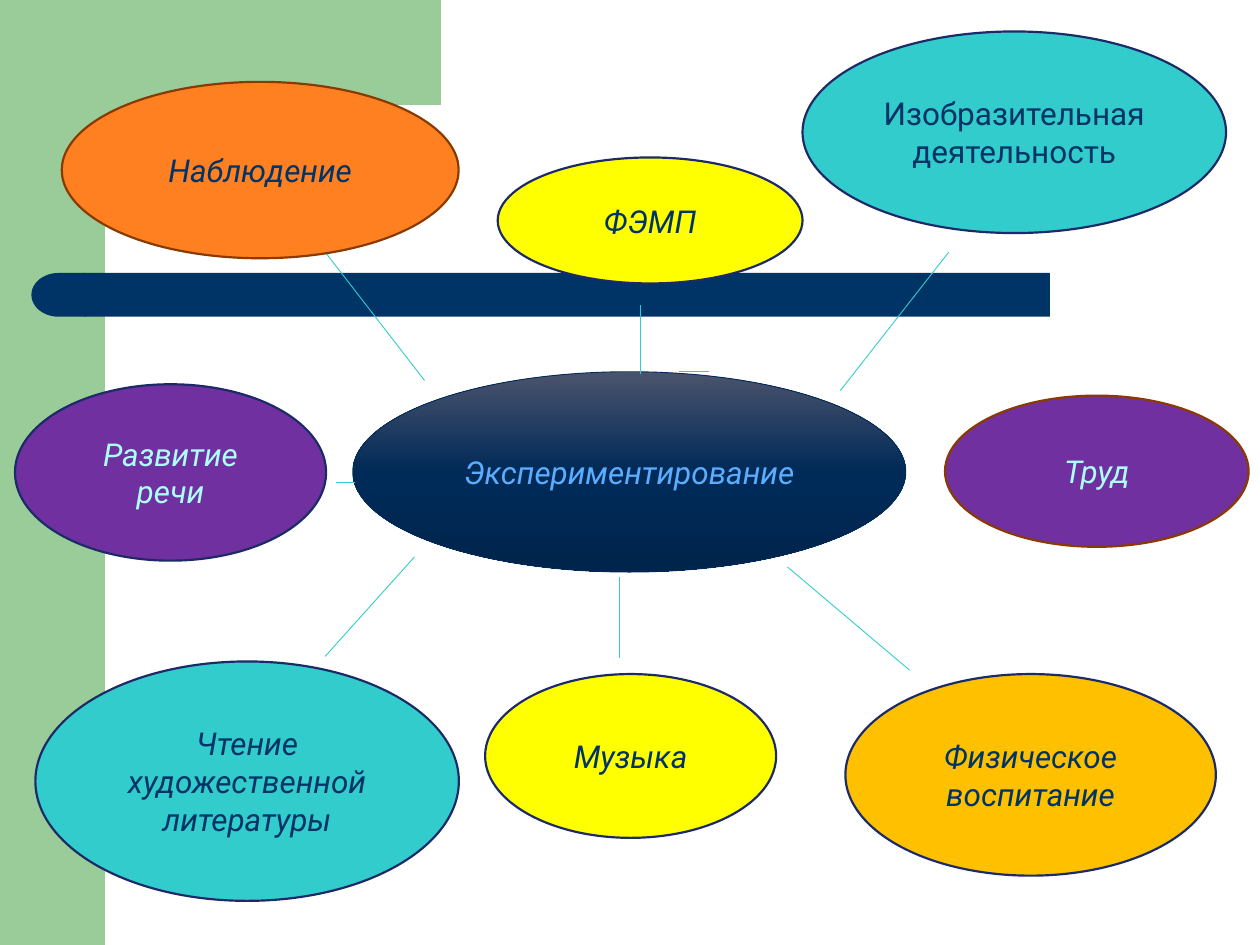
"""Build a slide of activities arranged around experimentation."""
from copy import deepcopy

from lxml.etree import SubElement
from pptx import Presentation
from pptx.dml.color import RGBColor
from pptx.enum.shapes import MSO_CONNECTOR, MSO_SHAPE as SHAPE
from pptx.enum.text import MSO_ANCHOR, PP_ALIGN
from pptx.oxml.ns import qn
from pptx.util import Pt

GREEN, NAVY, TEAL, YELLOW = "99CC99", "003366", "33CCCC", "FFFF00"
ORANGE, AMBER, PURPLE, ICE = "FF8021", "FFC000", "7030A0", "ADFFFF"
BLUE_EDGE, BROWN_EDGE = "1C2B68", "893A00"

CORNER = [(252, 0), (252, 60), (83.5, 60), (74, 61), (67, 66), (62, 75),
          (60, 84), (60, 92), (36, 92), (36, 0)]

CENTER = ["Экспериментирование"], (201.6, 212.4, 316, 114.5)
CENTER_STOPS = [(0, "4B536D"), (0.5, "002A57"), (1, "00254D")]

ACTIVITIES = [
    (["Наблюдение"], (35.3, 46.8, 226.8, 100.8), ORANGE, BROWN_EDGE, NAVY, True),
    (["ФЭМП"], (284.4, 90, 174.2, 72), YELLOW, BLUE_EDGE, NAVY, True),
    (["Изобразительная", "деятельность"], (458.6, 18, 242, 115.2), TEAL, BLUE_EDGE, NAVY, False),
    (["Развитие речи"], (8.6, 219.6, 177.8, 100.8), PURPLE, BLUE_EDGE, ICE, True),
    (["Труд"], (540, 226.1, 173.5, 86.4), PURPLE, BROWN_EDGE, ICE, True),
    (["Чтение", "художественной", "литературы"], (20.2, 378, 242, 136.8),
     TEAL, BLUE_EDGE, NAVY, True),
    (["Музыка"], (277.2, 385.2, 166.3, 93.6), YELLOW, BLUE_EDGE, NAVY, True),
    (["Физическое", "воспитание"], (483.1, 385.2, 211.7, 115.2), AMBER, BLUE_EDGE, NAVY, True),
]

SPOKES = [
    (242.6, 217.4, 185.8, 144), (480.2, 223.2, 542.2, 144),
    (388.1, 212.4, 405.4, 212.4), (192.2, 275.8, 203, 275.8),
    (365.8, 213.8, 365.8, 174.2), (236.9, 318.2, 185.8, 375.1),
    (354.2, 329.8, 354.2, 375.8), (450, 324, 519.8, 383),
]


def rgb(color):
    return RGBColor.from_string(color)


def paint(sp, fill, edge=None, width=1.25):
    sp.shadow.inherit = False
    if fill:
        sp.fill.solid()
        sp.fill.fore_color.rgb = rgb(fill)
    if edge:
        sp.line.color.rgb = rgb(edge)
        sp.line.width = Pt(width)
    else:
        sp.line.fill.background()


def add_shape(slide, kind, box):
    return slide.shapes.add_shape(kind, *map(Pt, box))


def write(sp, lines, color, italic, inset=(9.4, 5)):
    tf = sp.text_frame
    tf.word_wrap = True
    tf.vertical_anchor = MSO_ANCHOR.MIDDLE
    tf.margin_left = tf.margin_right = Pt(inset[0])
    tf.margin_top = tf.margin_bottom = Pt(inset[1])
    tf.text = "\n".join(lines)
    for p in tf.paragraphs:
        p.alignment = PP_ALIGN.CENTER
        p.font.name, p.font.size, p.font.italic = "Roboto", Pt(18), italic
        p.font.color.rgb = rgb(color)


def add_backdrop(slide):
    paint(add_shape(slide, SHAPE.RECTANGLE, (0, 0, 60, 540)), GREEN)
    builder = slide.shapes.build_freeform(*CORNER[0], scale=Pt(1))
    builder.add_line_segments(CORNER[1:], close=True)
    paint(builder.convert_to_shape(), GREEN)
    paint(add_shape(slide, SHAPE.RECTANGLE, (48, 156, 552, 25)), NAVY)
    cap = add_shape(slide, SHAPE.FLOWCHART_DELAY, (18, 156, 31, 25))
    cap._element.spPr.find(qn("a:xfrm")).set("flipH", "1")
    paint(cap, NAVY)


def add_center(slide):
    lines, box = CENTER
    sp = add_shape(slide, SHAPE.OVAL, box)
    sp.fill.gradient()
    sp.fill.gradient_angle = 270
    stops = sp._element.spPr.find(qn("a:gradFill")).find(qn("a:gsLst"))
    stops.append(deepcopy(stops[0]))
    for stop, (position, color) in zip(sp.fill.gradient_stops, CENTER_STOPS):
        stop.position = position
        stop.color.rgb = rgb(color)
    paint(sp, None, "002A57", 0.5)
    write(sp, lines, "5CADFF", True, (7.2, 3.6))


def add_spoke(slide, ends):
    line = slide.shapes.add_connector(MSO_CONNECTOR.STRAIGHT, *map(Pt, ends))
    line.line.color.rgb = rgb(TEAL)
    line.line.width = Pt(0.5)
    SubElement(line._element.spPr, qn("a:effectLst"))


def main():
    prs = Presentation()
    prs.slide_width, prs.slide_height = Pt(720), Pt(540)
    slide = prs.slides.add_slide(prs.slide_layouts[6])
    add_backdrop(slide)
    add_center(slide)
    for ends in SPOKES:
        add_spoke(slide, ends)
    for lines, box, fill, edge, color, italic in ACTIVITIES:
        sp = add_shape(slide, SHAPE.OVAL, box)
        paint(sp, fill, edge)
        write(sp, lines, color, italic)
    prs.save("out.pptx")


if __name__ == "__main__":
    main()
